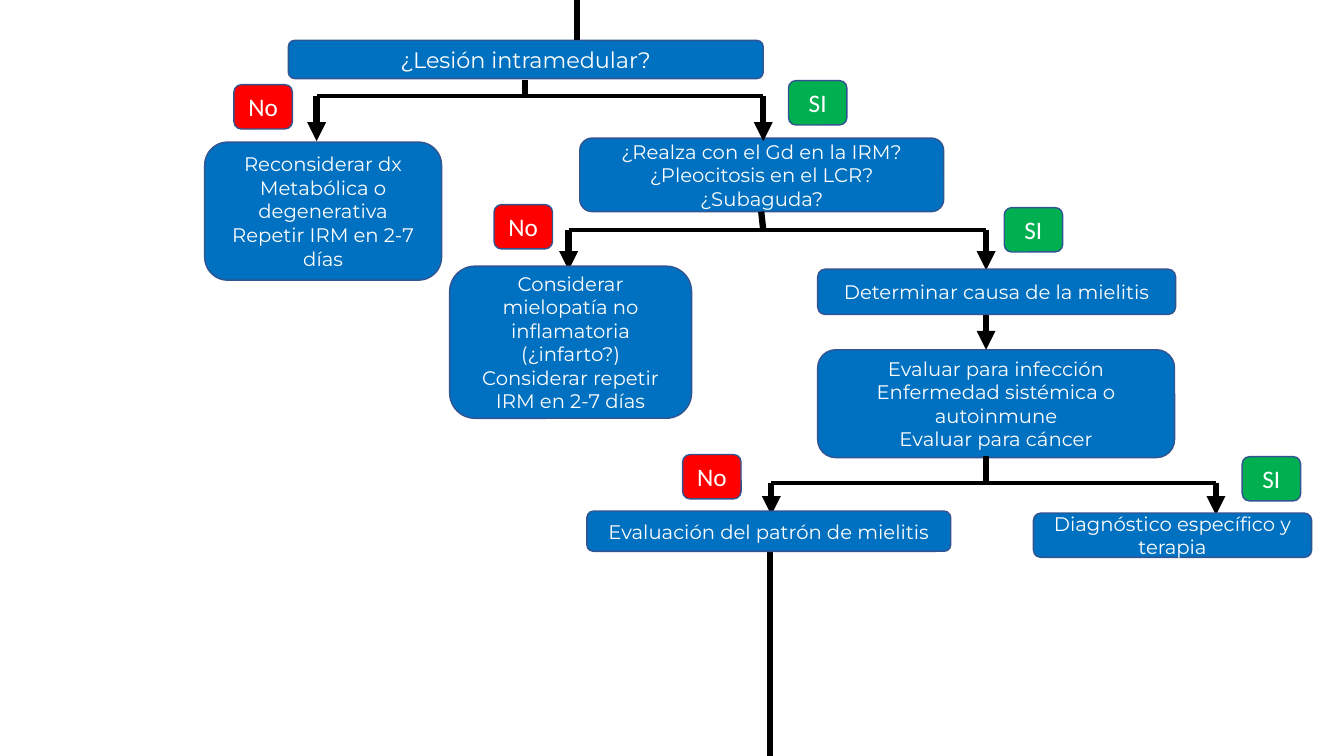
import pptx
import pptx.dml.color
import pptx.enum.shapes
import pptx.enum.text
import pptx.oxml
import pptx.oxml.ns
import pptx.util

RGBColor = pptx.dml.color.RGBColor
BLUE = RGBColor(0x00, 0x70, 0xC0)
OUTLINE = RGBColor(0x32, 0x54, 0x91)
RED = RGBColor(0xFF, 0x00, 0x00)
GREEN = RGBColor(0x00, 0xB0, 0x50)
WHITE = RGBColor(0xFF, 0xFF, 0xFF)
BLACK = RGBColor(0x00, 0x00, 0x00)

SLIDE_WIDTH, SLIDE_HEIGHT = 1333, 750
BADGE_WIDTH, BADGE_HEIGHT = 58, 44
THICK, THIN = 4.5, 3

STEP_FONT = {"name": "Montserrat", "size": pptx.util.Pt(14)}
TITLE_FONT = {"name": "Montserrat", "size": pptx.util.Pt(16)}
BADGE_FONT = {"name": "Calibri", "size": pptx.util.Pt(18)}

# Each step: box (left, top, width, height), text, font
QUESTIONS = [
    ((286, 40, 471, 38), "¿Lesión intramedular?", TITLE_FONT),
    ((811, 347, 354, 107),
     "Evaluar para infección\nEnfermedad sistémica o autoinmune\nEvaluar para cáncer", STEP_FONT),
    ((575, 137, 361, 73),
     "¿Realza con el Gd en la IRM?\n¿Pleocitosis en el LCR?\n¿Subaguda?", STEP_FONT),
]
OUTCOMES = [
    ((203, 141, 235, 137),
     "Reconsiderar dx\nMetabólica o degenerativa\nRepetir IRM en 2-7 días", STEP_FONT),
    ((811, 267, 355, 45), "Determinar causa de la mielitis", STEP_FONT),
    ((582, 507, 361, 40), "Evaluación del patrón de mielitis", STEP_FONT),
    ((1025, 509, 276, 44), "Diagnóstico específico y terapia", STEP_FONT),
    ((446, 264, 240, 151),
     "Considerar mielopatía no inflamatoria (¿infarto?)\nConsiderar repetir IRM en 2-7 días",
     STEP_FONT),
]
# Each fork: box, stem start and end x, bar y, No and SI badge corners, all relative to the box
FORKS = [
    ((314, 79, 443, 61), (207, 207), 16, (-82, 5), (468, 1)),
    ((564, 210, 414, 58), (191, 193), 18, (-74, -7), (432, -4)),
    ((765, 452, 441, 59), (213, 213), 27, (-88, -1), (467, 1)),
]


def px(length):
    return pptx.util.Emu(length * 9144)


def add_step(slide, box, text, font, fill=BLUE):
    step = slide.shapes.add_shape(
        pptx.enum.shapes.MSO_SHAPE.ROUNDED_RECTANGLE, *map(px, box))
    step.shadow.inherit = False
    step.fill.solid()
    step.fill.fore_color.rgb = fill
    step.line.color.rgb = OUTLINE
    step.line.width = pptx.util.Pt(1)
    step.text_frame.word_wrap = True
    step.text_frame.vertical_anchor = pptx.enum.text.MSO_ANCHOR.MIDDLE
    step.text_frame.text = text
    for paragraph in step.text_frame.paragraphs:
        paragraph.alignment = pptx.enum.text.PP_ALIGN.CENTER
        paragraph.font.color.rgb = WHITE
        for attribute, value in font.items():
            setattr(paragraph.font, attribute, value)


def add_link(slide, start, end, width=THICK, arrow=False):
    link = slide.shapes.add_connector(
        pptx.enum.shapes.MSO_CONNECTOR.STRAIGHT, *map(px, start + end))
    link.line.color.rgb = BLACK
    link.line.width = pptx.util.Pt(width)
    if arrow:
        tail = pptx.oxml.ns.qn("a:tailEnd")
        link.line._get_or_add_ln().append(
            link.element.makeelement(tail, {"type": "triangle"}))
    properties = link.element.spPr
    properties.append(properties.makeelement(pptx.oxml.ns.qn("a:effectLst"), {}))


def add_fork(slide, box, stem, bar, no_corner, si_corner):
    """Split one question into its No (left) and SI (right) arrows."""
    left, top, width, height = box
    right, bar_y = left + width, top + bar
    add_link(slide, (left + stem[0], top), (left + stem[1], bar_y))
    add_link(slide, (left, bar_y), (right, bar_y), THIN)
    for x in (left, right):
        add_link(slide, (x, bar_y), (x, top + height), arrow=True)
    for (dx, dy), answer, fill in ((no_corner, "No", RED), (si_corner, "SI", GREEN)):
        badge = (left + dx, top + dy, BADGE_WIDTH, BADGE_HEIGHT)
        add_step(slide, badge, answer, BADGE_FONT, fill)


def build_flowchart(slide):
    for question in QUESTIONS:
        add_step(slide, *question)
    add_link(slide, (572, 0), (572, 40))
    add_link(slide, (978, 313), (978, 347), arrow=True)
    add_link(slide, (764, 548), (764, SLIDE_HEIGHT))
    for fork in FORKS:
        add_fork(slide, *fork)
    for outcome in OUTCOMES:
        add_step(slide, *outcome)


def main():
    presentation = pptx.Presentation()
    presentation.slide_width = px(SLIDE_WIDTH)
    presentation.slide_height = px(SLIDE_HEIGHT)
    build_flowchart(presentation.slides.add_slide(presentation.slide_layouts[6]))
    presentation.save("out.pptx")


if __name__ == "__main__":
    main()
